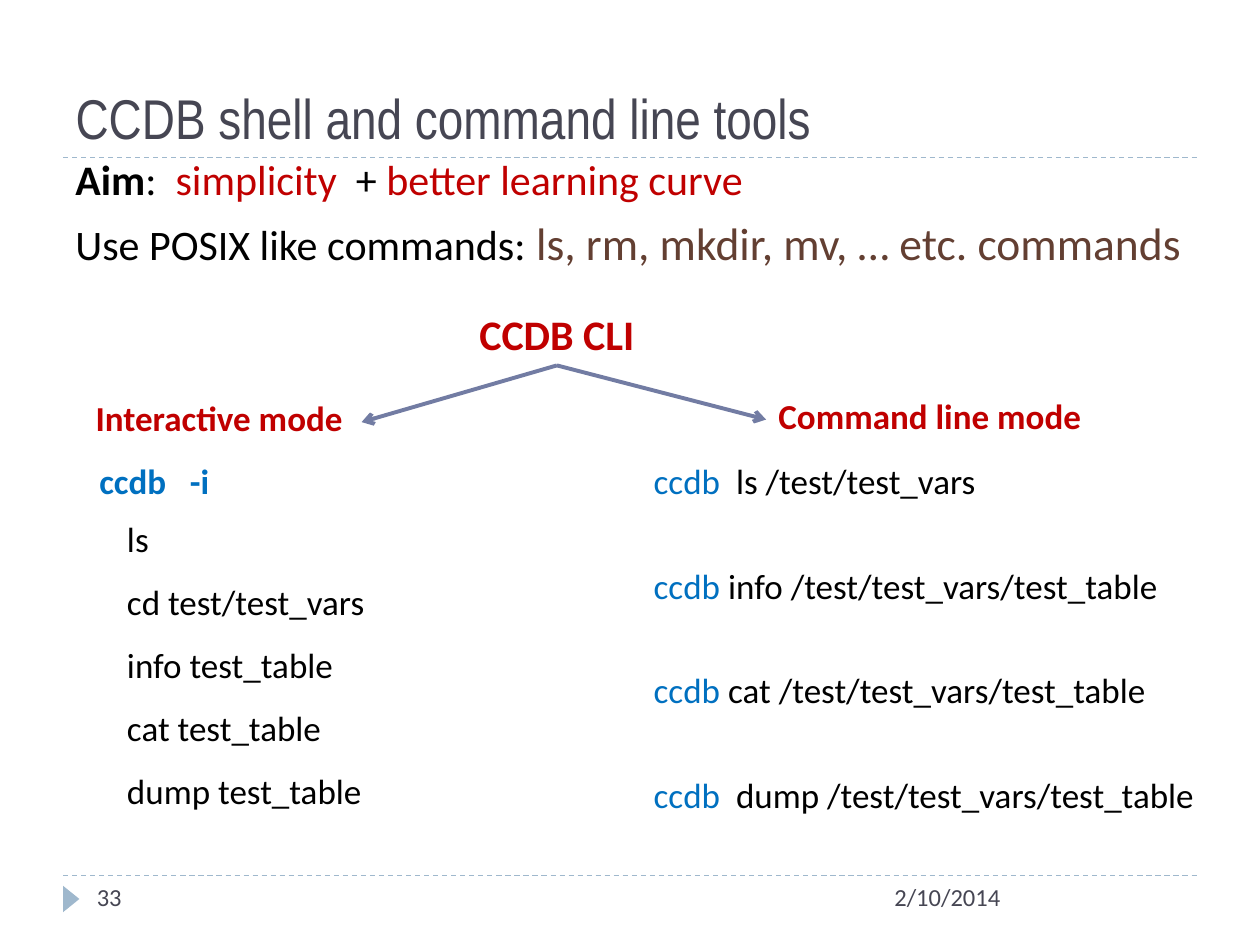
"""Build the slide on CCDB shell and command line tools."""
from dataclasses import dataclass

from lxml.etree import SubElement
from pptx import Presentation
from pptx.dml.color import RGBColor
from pptx.enum.dml import MSO_LINE
from pptx.enum.shapes import MSO_CONNECTOR, MSO_SHAPE
from pptx.enum.text import MSO_ANCHOR, PP_ALIGN
from pptx.oxml.ns import qn
from pptx.util import Inches, Pt


@dataclass(frozen=True)
class Theme:
    title_font: str = "Arial Narrow"
    font: str = "Calibri"
    slate: str = "464653"
    black: str = "000000"
    red: str = "C00000"
    brown: str = "633F32"
    blue: str = "0070C0"
    rule: str = "9FB8CD"
    arrow: str = "727CA3"
    title: int = 32
    large: int = 26
    lead: int = 24
    body: int = 20
    footer: int = 14


T = Theme()


def add_text(box, paragraphs, size, bold=False, before=0, align=PP_ALIGN.LEFT, wrap=True):
    sp = s.shapes.add_textbox(*map(Inches, box))
    tf = sp.text_frame
    tf.word_wrap = wrap
    for i, runs in enumerate(paragraphs):
        p = tf.add_paragraph() if i else tf.paragraphs[0]
        p.alignment, p.space_before = align, Pt(before)
        for text, color in runs:
            r = p.add_run()
            r.text = text
            r.font.name, r.font.size, r.font.bold = T.font, Pt(size), bold
            r.font.color.rgb = RGBColor.from_string(color)
    return sp


def add_line(x1, y1, x2, y2, color, width):
    line = s.shapes.add_connector(MSO_CONNECTOR.STRAIGHT, *map(Inches, (x1, y1, x2, y2)))
    line.line.color.rgb = RGBColor.from_string(color)
    line.line.width = Pt(width)
    SubElement(line._element.spPr, qn("a:effectLst"))
    return line


prs = Presentation()
prs.slide_width, prs.slide_height = Inches(10), Inches(7.5)
s = prs.slides.add_slide(prs.slide_layouts[5])

for y in (6.95, 1.25):
    add_line(0.5, y, 9.5, y, T.rule, 0.75).line.dash_style = MSO_LINE.DASH

marker = s.shapes.add_shape(
    MSO_SHAPE.ISOSCELES_TRIANGLE, Inches(0.46), Inches(7.07), Inches(0.21), Inches(0.13))
marker.rotation = 90
marker.shadow.inherit = False
marker.fill.solid()
marker.fill.fore_color.rgb = RGBColor.from_string(T.rule)
marker.line.fill.background()

title = s.shapes.title
title.left, title.top, title.width, title.height = map(Inches, (0.5, 0.17, 9, 1.08))
tf = title.text_frame
tf.text = "CCDB shell and command line tools"
tf.vertical_anchor = MSO_ANCHOR.BOTTOM
p = tf.paragraphs[0]
p.alignment = PP_ALIGN.LEFT
font = p.runs[0].font
font.name, font.size = T.title_font, Pt(T.title)
font.color.rgb = RGBColor.from_string(T.slate)

aim = add_text((0.5, 1.17, 9, 1.42), [
    [("Aim", T.black), (":  ", T.black), ("simplicity  ", T.red), ("+", T.black),
     (" better learning curve", T.red)],
    [("Use POSIX like commands:", T.black), (" ", T.black),
     ("ls, rm, mkdir, mv, … etc. commands", T.brown)],
], T.lead, before=6)
first, second = aim.text_frame.paragraphs
first.runs[0].font.bold = True
for r in second.runs[1:]:
    r.font.size = Pt(T.large)

cli = add_text((2, 2.4, 4.84, 0.5), [[("CCDB CLI", T.red)]], T.lead, True, 6, PP_ALIGN.CENTER)
interactive = add_text((0.66, 3.1, 2.21, 0.5), [[("Interactive mode", T.red)]], T.body, True, 6)
command = add_text((6.08, 3.08, 3, 0.5), [[("Command line mode", T.red)]], T.body, True, 6)

for mode, side, x, y in ((interactive, 3, 2.87, 3.35), (command, 1, 6.08, 3.33)):
    arrow = add_line(4.42, 2.9, x, y, T.arrow, 2.25)
    arrow.begin_connect(cli, 2)
    arrow.end_connect(mode, side)
    SubElement(arrow.line._get_or_add_ln(), qn("a:tailEnd"), type="arrow")

add_text((0.69, 3.6, 1.4, 0.44), [[("ccdb   -i", T.blue)]], T.body, True, wrap=False)
shell_commands = ("ls", "cd test/test_vars", "info test_table", "cat test_table",
                  "dump test_table")
for i, text in enumerate(shell_commands):
    add_text((0.91, 4.06 + 0.5 * i, 2.3, 0.44), [[(text, T.black)]], T.body, wrap=False)

line_commands = (("ccdb  ", "ls /test/test_vars"),
                 ("ccdb ", "info /test/test_vars/test_table"),
                 ("ccdb ", "cat /test/test_vars/test_table"),
                 ("ccdb  ", "dump /test/test_vars/test_table"))
for i, (program, arguments) in enumerate(line_commands):
    add_text((5.09, 3.6 + 0.83 * i, 4.6, 0.44),
             [[(program, T.blue), (arguments, T.black)]], T.body, wrap=False)

for x, width, text in ((0.67, 2.17, "33"), (7, 2.5, "2/10/2014")):
    add_text((x, 6.95, width, 0.4), [[(text, T.slate)]], T.footer)

prs.save("out.pptx")
